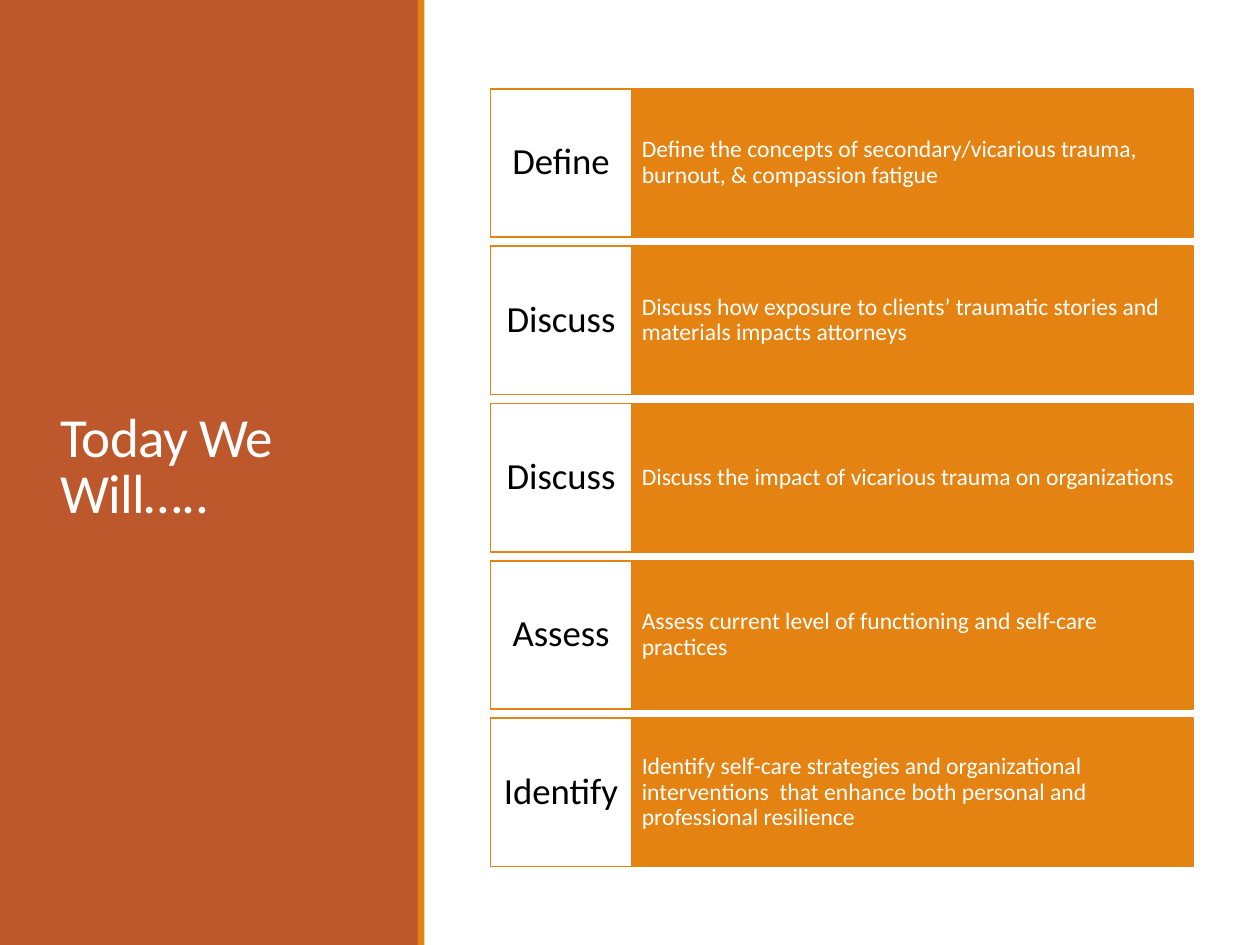
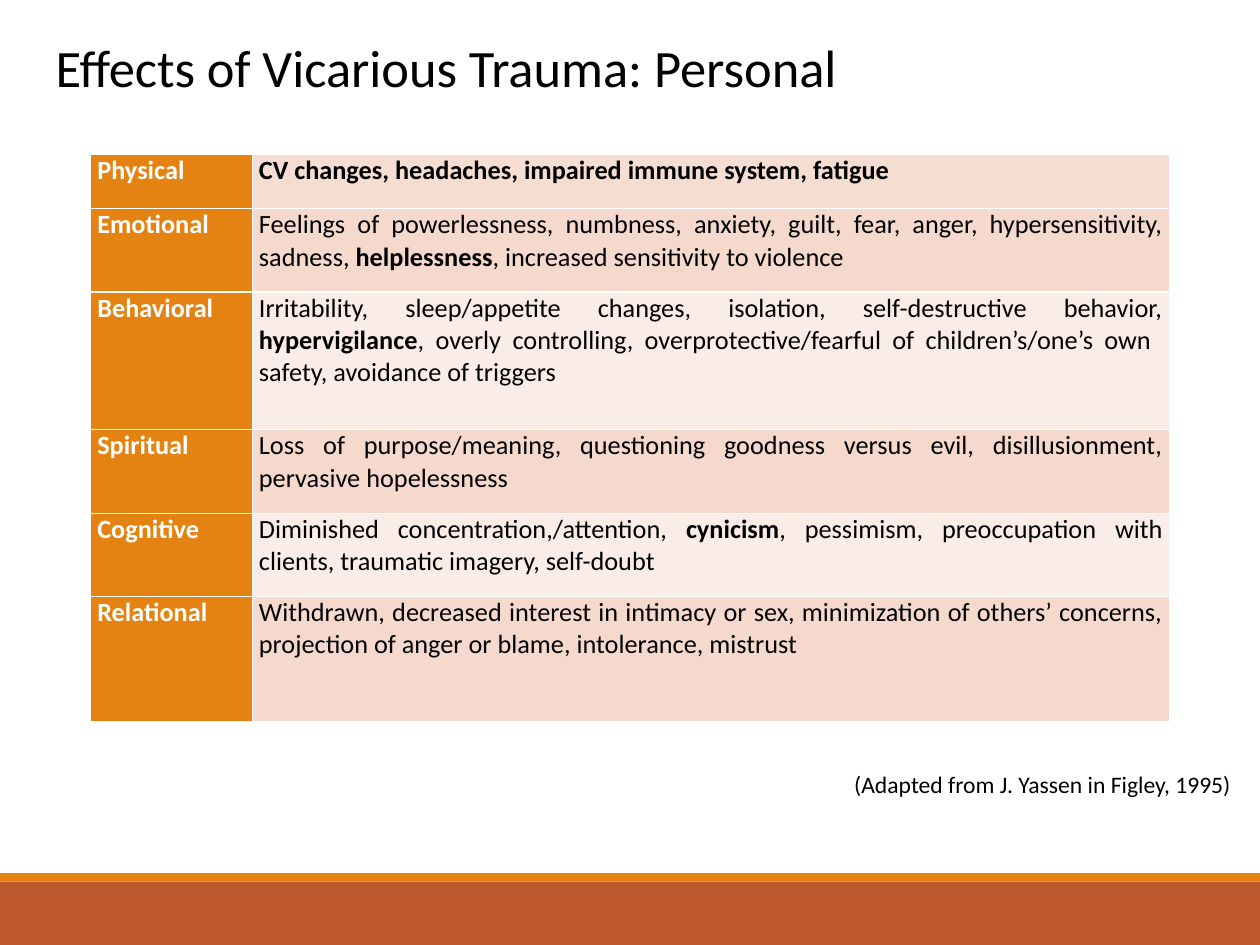
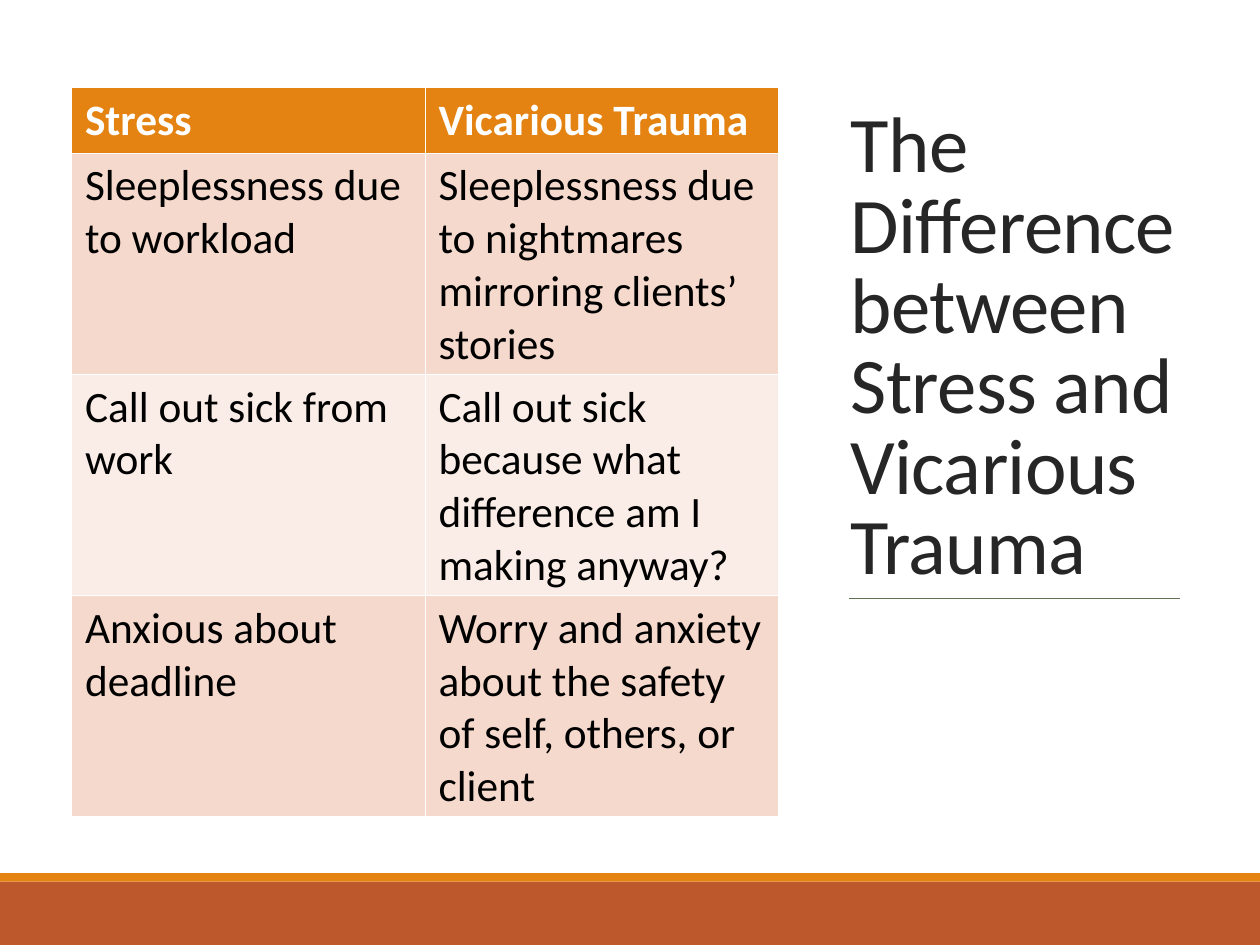
from lxml.etree import SubElement
from pptx import Presentation
from pptx.dml.color import RGBColor
from pptx.enum.shapes import MSO_CONNECTOR, MSO_SHAPE
from pptx.enum.text import MSO_ANCHOR as Anchor, PP_ALIGN as Align
from pptx.oxml import parse_xml
from pptx.oxml.ns import qn
from pptx.util import Inches, Pt

ORANGE = RGBColor(0xE4, 0x83, 0x12)
RUST = RGBColor(0xBD, 0x58, 0x2C)
WHITE = RGBColor(0xFF, 0xFF, 0xFF)
BLACK = RGBColor(0, 0, 0)
CHARCOAL = RGBColor(0x26, 0x26, 0x26)
OLIVE = RGBColor(0x63, 0x70, 0x52)
PEACH = RGBColor(0xF5, 0xD9, 0xCC)
PALE_PEACH = RGBColor(0xFA, 0xED, 0xE7)
TOP_PEACH = RGBColor(0xF5, 0xDD, 0xD2)
FONT = "Calibri"
TITLE_SHADOW = (
    '<a:effectLst xmlns:a="http://schemas.openxmlformats.org/drawingml/2006/main">'
    '<a:outerShdw blurRad="50800" dist="38100" dir="18900000" algn="bl">'
    '<a:prstClr val="black"><a:alpha val="40000"/></a:prstClr>'
    "</a:outerShdw></a:effectLst>"
)


def add_box(page, at, fill=None, line=None, text="", size=18, color=WHITE,
            align=Align.LEFT, anchor=Anchor.MIDDLE, spacing=1.0,
            margins=(0.1, 0.05), title=False, tracking=0):
    """Add a filled rectangle, or a plain text box when there is no fill."""
    place = [Inches(value) for value in at]
    if fill is None:
        box = page.shapes.add_textbox(*place)
    else:
        box = page.shapes.add_shape(MSO_SHAPE.RECTANGLE, *place)
        box.shadow.inherit = False
        box.fill.solid()
        box.fill.fore_color.rgb = fill
        if line is None:
            box.line.fill.background()
        else:
            box.line.color.rgb = line
            box.line.width = Pt(1.25)
    if text:
        frame = box.text_frame
        frame.word_wrap = True
        frame.vertical_anchor = anchor
        frame.margin_left = frame.margin_right = Inches(margins[0])
        frame.margin_top = frame.margin_bottom = Inches(margins[1])
        para = frame.paragraphs[0]
        para.alignment = align
        para.line_spacing = spacing
        span = para.add_run()
        span.text = text
        span.font.name = FONT
        span.font.size = Pt(size)
        span.font.color.rgb = color
        if title:
            properties = span.font.fill._xPr
            properties.set("spc", str(tracking))
            properties.find(qn("a:solidFill")).addnext(parse_xml(TITLE_SHADOW))


def add_grid(page, left, top, widths, heights, rows, size, margins, style):
    """Add a table; style(row, column) gives fill, font colour and alignment.

    Asterisks in a cell switch bold on and off.
    """
    grid = page.shapes.add_table(
        len(heights), len(widths), Inches(left), Inches(top),
        Inches(sum(widths)), Inches(sum(heights))).table
    grid.horz_banding = False
    for column, width in zip(grid.columns, widths):
        column.width = Inches(width)
    for row, height in zip(grid.rows, heights):
        row.height = Inches(height)
    for r, texts in enumerate(rows):
        for c, text in enumerate(texts):
            fill, color, align = style(r, c)
            cell = grid.cell(r, c)
            cell.fill.solid()
            cell.fill.fore_color.rgb = fill
            cell.margin_left = cell.margin_right = Inches(margins[0])
            cell.margin_top = cell.margin_bottom = Inches(margins[1])
            para = cell.text_frame.paragraphs[0]
            para.alignment = align
            for index, part in enumerate(text.split("*")):
                if part:
                    span = para.add_run()
                    span.text = part
                    span.font.name = FONT
                    span.font.size = Pt(size)
                    span.font.bold = index % 2 == 1
                    span.font.color.rgb = color


deck = Presentation()
deck.slide_width, deck.slide_height = Inches(13.33), Inches(10)
agenda, effects, difference = [
    deck.slides.add_slide(deck.slide_layouts[6]) for _ in range(3)]

for page in (effects, difference):
    add_box(page, (0, 9.33, 13.33, 0.67), RUST)
    add_box(page, (0, 9.24, 13.33, 0.09), ORANGE)

# Agenda
add_box(agenda, (0, 0, 4.43, 10), RUST)
add_box(agenda, (0.54, 0.75, 3.37, 8.42), text="Today We Will…..", size=42,
        spacing=0.85, title=True, tracking=-50)
add_box(agenda, (4.42, 0, 0.07, 10), ORANGE)
goals = [
    ("Define", "Define the concepts of secondary/vicarious trauma, burnout, "
               "& compassion fatigue"),
    ("Discuss", "Discuss how exposure to clients’ traumatic stories and "
                "materials impacts attorneys"),
    ("Discuss", "Discuss the impact of vicarious trauma on organizations"),
    ("Assess", "Assess current level of functioning and self-care practices"),
    ("Identify", "Identify self-care strategies and organizational interventions  "
                 "that enhance both personal and professional resilience"),
]
for index, (verb, goal) in enumerate(goals):
    top = 0.94 + index * 1.665
    add_box(agenda, (6.67, top, 5.95, 1.57), ORANGE, ORANGE, goal,
            spacing=0.9, margins=(0.12, 0.4))
    add_box(agenda, (5.19, top, 1.49, 1.57), WHITE, ORANGE, verb, 28, BLACK,
            Align.CENTER, spacing=0.9, margins=(0.08, 0.16))

# Personal effects
personal_effects = [
    ("*Physical*", "*CV changes, headaches, impaired immune system, fatigue*"),
    ("*Emotional*", "Feelings of powerlessness, numbness, anxiety, guilt, fear, anger, "
     "hypersensitivity, sadness, *helplessness*, increased sensitivity to violence"),
    ("*Behavioral*", "Irritability, sleep/appetite changes, isolation, self-destructive "
     "behavior, *hypervigilance*, overly controlling, overprotective/fearful of "
     "children’s/one’s own  safety, avoidance of triggers"),
    ("*Spiritual*", "Loss of purpose/meaning, questioning goodness versus evil, "
     "disillusionment, pervasive hopelessness"),
    ("*Cognitive*", "Diminished concentration,/attention, *cynicism*, pessimism, "
     "preoccupation with clients, traumatic imagery, self-doubt"),
    ("*Relational*", "Withdrawn, decreased interest in intimacy or sex, minimization of "
     "others’ concerns, projection of anger or blame, intolerance, mistrust"),
]
effect_fills = [TOP_PEACH] + [PEACH, PALE_PEACH] * 2 + [PEACH]
add_grid(effects, 0.96, 1.63, [1.71, 9.7], [0.58, 0.88, 1.46, 0.88, 0.88, 1.33],
         personal_effects, 20, (0.07, 0),
         lambda r, c: (effect_fills[r], BLACK, Align.JUSTIFY) if c
         else (ORANGE, WHITE, Align.LEFT))
add_box(effects, (0.49, 0.32, 10.07, 0.77), text="Effects of Vicarious Trauma: Personal",
        size=40, color=BLACK, anchor=Anchor.TOP, title=True)
add_box(effects, (6.45, 8.07, 6.67, 0.42), text="(Adapted from J. Yassen in Figley, 1995)",
        color=BLACK, align=Align.RIGHT, anchor=Anchor.TOP, spacing=1.1)

# Stress and vicarious trauma
add_box(difference, (8.9, 0.93, 3.72, 5.37),
        text="The Difference between Stress and Vicarious Trauma", size=60,
        color=CHARCOAL, anchor=Anchor.BOTTOM, spacing=0.85, title=True, tracking=-50)
rule = difference.shapes.add_connector(
    MSO_CONNECTOR.STRAIGHT, Inches(8.98), Inches(6.33), Inches(12.48), Inches(6.33))
rule.line.color.rgb = OLIVE
rule.line.width = Pt(0.5)
SubElement(rule._element.spPr, qn("a:effectLst"))
comparison = [
    ("*Stress*", "*Vicarious Trauma*"),
    ("Sleeplessness due to workload",
     "Sleeplessness due to nightmares mirroring clients’ stories"),
    ("Call out sick from work",
     "Call out sick because what difference am I making anyway?"),
    ("Anxious about deadline",
     "Worry and anxiety about the safety of self, others, or client"),
]
add_grid(difference, 0.76, 0.93, [3.74] * 2, [0.68] + [2.34] * 3, comparison, 33,
         (0.14, 0.07),
         lambda r, c: (PEACH if r % 2 else PALE_PEACH, BLACK, Align.LEFT) if r
         else (ORANGE, WHITE, Align.LEFT))

deck.save("out.pptx")
